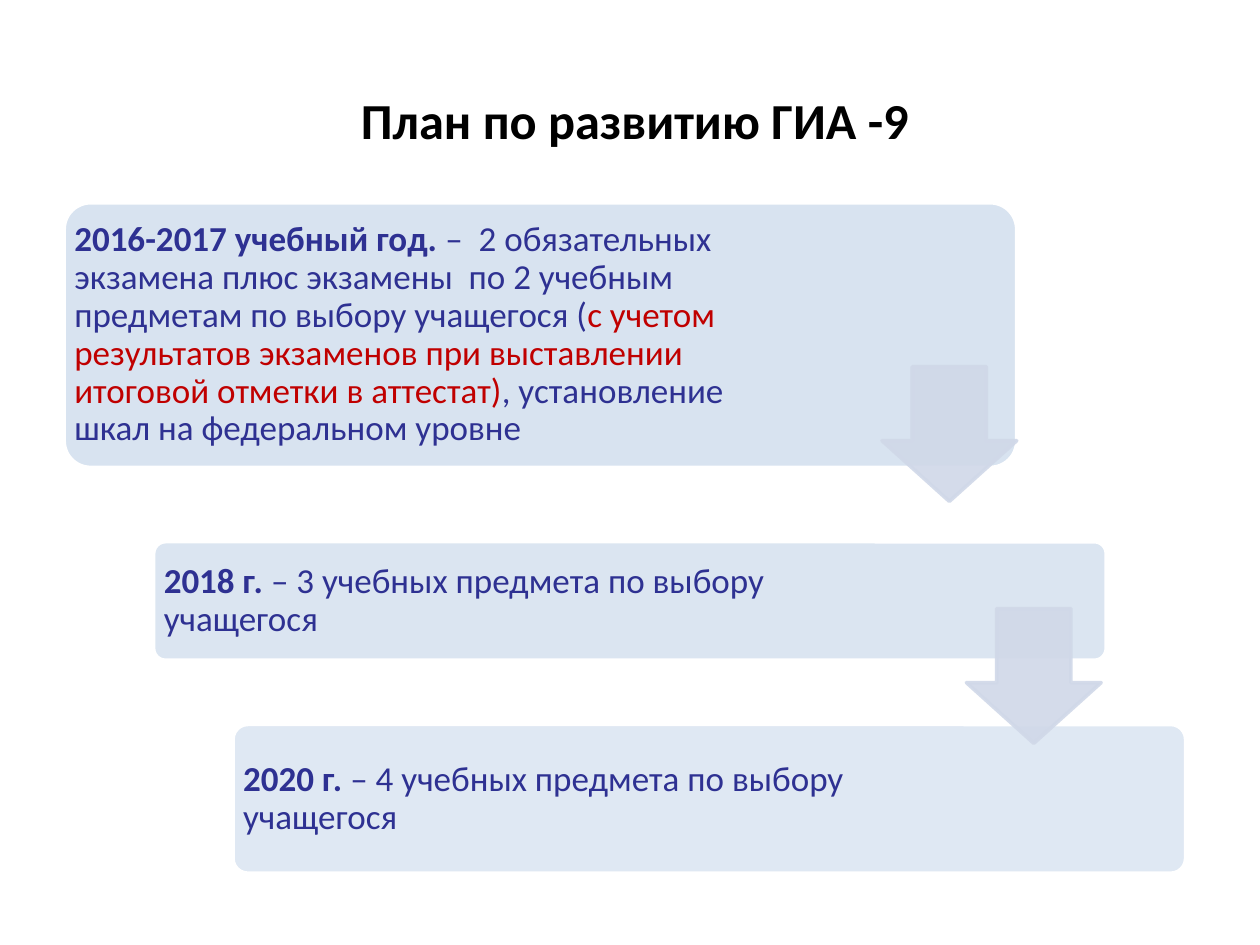
from dataclasses import dataclass

from lxml import etree
from pptx import Presentation
from pptx.dml.color import RGBColor
from pptx.enum.shapes import MSO_SHAPE
from pptx.enum.text import MSO_ANCHOR, PP_ALIGN
from pptx.oxml.ns import qn
from pptx.util import Inches, Pt

ROUNDED = MSO_SHAPE.ROUNDED_RECTANGLE
DOWN_ARROW = MSO_SHAPE.DOWN_ARROW
MIDDLE = MSO_ANCHOR.MIDDLE
CENTER = PP_ALIGN.CENTER
TITLE_ONLY = 5


@dataclass(frozen=True)
class Theme:
    font: str = "Calibri"
    title_size: float = 28.8
    body_size: float = 20
    line_width: float = 2
    title: RGBColor = RGBColor(0x00, 0x00, 0x00)
    background: RGBColor = RGBColor(0xFF, 0xFF, 0xFF)
    body: RGBColor = RGBColor(0x2E, 0x31, 0x92)
    accent: RGBColor = RGBColor(0xC0, 0x00, 0x00)
    stage: RGBColor = RGBColor(0x4F, 0x81, 0xBD)
    arrow: RGBColor = RGBColor(0xD0, 0xD8, 0xE8)


THEME = Theme()

STAGE_WIDTH = 7.56
ARROW_SIZE = 1.07
ARROW_OPACITY = 90
STAGES = [
    ((0.51, 1.61, STAGE_WIDTH, 2.1), 5.88, 22, [
        ("2016-2017 учебный год.", True, THEME.body),
        (" –  2 обязательных экзамена плюс экзамены  по 2 учебным предметам "
         "по выбору учащегося (", False, THEME.body),
        ("с учетом результатов экзаменов при выставлении итоговой отметки "
         "в аттестат)", False, THEME.accent),
        (", установление шкал на федеральном уровне", False, THEME.body),
    ]),
    ((1.22, 4.3, STAGE_WIDTH, 0.94), 5.82, 20, [
        ("2018 г. ", True, THEME.body),
        ("– 3 учебных предмета по выбору учащегося", False, THEME.body),
    ]),
    ((1.85, 5.75, STAGE_WIDTH, 1.18), 5.82, 18, [
        ("2020 г.", True, THEME.body),
        (" – 4 учебных предмета по выбору учащегося", False, THEME.body),
    ]),
]
ARROWS = [(7, 2.91), (7.67, 4.83)]


def set_opacity(fill_parent, percent):
    color = fill_parent.find(qn("a:solidFill"))[0]
    etree.SubElement(color, qn("a:alpha"), val=str(percent * 1000))


def add_panel(slide, preset, box, adjustments, fill, line, opacity):
    panel = slide.shapes.add_shape(preset, *map(Inches, box))
    panel.shadow.inherit = False
    for index, value in enumerate(adjustments):
        panel.adjustments[index] = value
    panel.fill.solid()
    panel.fill.fore_color.rgb = fill
    panel.line.color.rgb = line
    panel.line.width = Pt(THEME.line_width)
    set_opacity(panel.element.spPr, opacity)
    return panel


def add_title(slide, box):
    title = slide.shapes.title
    title.left, title.top, title.width, title.height = map(Inches, box)
    frame = title.text_frame
    frame.text = "План по развитию ГИА -9"
    frame.vertical_anchor = MIDDLE
    heading = frame.paragraphs[0]
    heading.alignment = CENTER
    heading.font.name = THEME.font
    heading.font.size = Pt(THEME.title_size)
    heading.font.bold = True
    heading.font.color.rgb = THEME.title


def add_stage(slide, box, text_width, opacity, passages):
    add_panel(slide, ROUNDED, box, [0.1], THEME.stage, THEME.background, opacity)
    left, top, _, height = box
    label = slide.shapes.add_textbox(*map(Inches, (left, top, text_width, height)))
    frame = label.text_frame
    frame.word_wrap = True
    frame.vertical_anchor = MIDDLE
    frame.margin_left = frame.margin_right = Inches(0.08)
    frame.margin_top = frame.margin_bottom = Inches(0.08)
    description = frame.paragraphs[0]
    description.line_spacing = 0.9
    description.font.name = THEME.font
    description.font.size = Pt(THEME.body_size)
    for text, bold, color in passages:
        passage = description.add_run()
        passage.text = text
        passage.font.bold = bold
        passage.font.color.rgb = color


def add_arrow(slide, box):
    arrow = add_panel(slide, DOWN_ARROW, box, [0.55, 0.45],
                      THEME.arrow, THEME.arrow, ARROW_OPACITY)
    set_opacity(arrow.element.spPr.find(qn("a:ln")), ARROW_OPACITY)


def main():
    presentation = Presentation()
    presentation.slide_width = Inches(10)
    presentation.slide_height = Inches(7.5)
    slide = presentation.slides.add_slide(presentation.slide_layouts[TITLE_ONLY])
    slide.background.fill.solid()
    slide.background.fill.fore_color.rgb = THEME.background

    add_title(slide, (0.79, 0.67, 8.5, 0.56))
    for stage in STAGES:
        add_stage(slide, *stage)
    for left, top in ARROWS:
        add_arrow(slide, (left, top, ARROW_SIZE, ARROW_SIZE))

    presentation.save("out.pptx")


if __name__ == "__main__":
    main()
